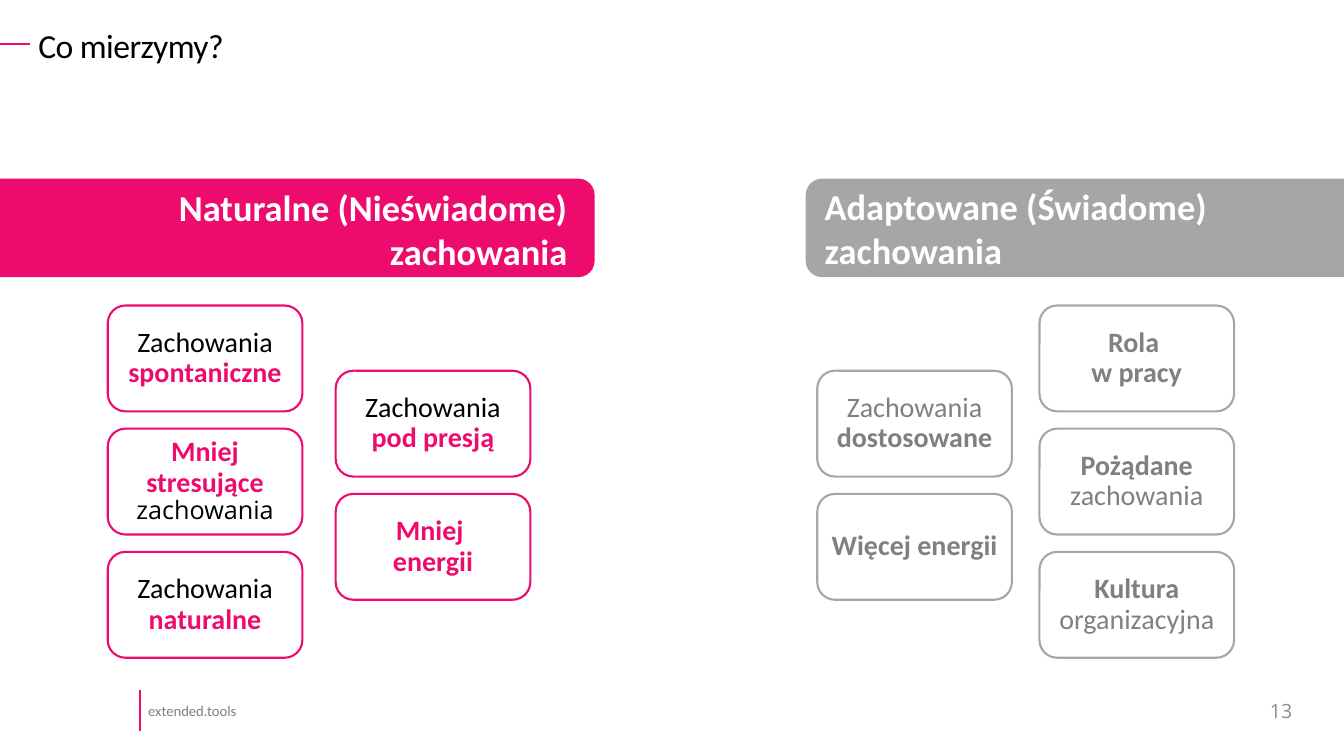
from pptx import Presentation
from pptx.dml.color import RGBColor
from pptx.enum.shapes import MSO_CONNECTOR, MSO_SHAPE
from pptx.enum.text import MSO_ANCHOR, PP_ALIGN
from pptx.oxml.ns import qn
from pptx.util import Pt
from lxml.etree import SubElement

PINK = RGBColor(0xED, 0x0C, 0x6D)
SILVER = RGBColor(0xA6, 0xA6, 0xA6)
GREY = RGBColor(0x80, 0x80, 0x80)
PAGE_GREY = RGBColor(0x8C, 0x8C, 0x8C)
BLACK = RGBColor(0, 0, 0)
WHITE = RGBColor(0xFF, 0xFF, 0xFF)

CARD_WIDTH, CARD_HEIGHT = 139, 75.6
CARD_TOP, CARD_PITCH = 218.2, 88
INNER_TOP = 264.8  # the two-card columns sit between the three-card rows


def add_span(para, text, size=20, font="Calibri", color=BLACK, bold=False, spacing=None):
    """Add formatted text to a paragraph; a newline becomes a line break."""
    for index, piece in enumerate(text.split("\n")):
        if index:
            para.add_line_break()
        span = para.add_run()
        span.text = piece
        span.font.size = Pt(size)
        span.font.name = font
        span.font.bold = bold
        span.font.color.rgb = color
        if spacing is not None:
            span._r.get_or_add_rPr().set("spc", str(spacing))


class SlideBuilder:
    def __init__(self, page):
        self.page = page

    def fill_frame(self, box, spans, align=PP_ALIGN.LEFT, anchor=MSO_ANCHOR.MIDDLE,
                   insets=(7.2, 3.6), line_spacing=None):
        frame = box.text_frame
        frame.word_wrap = True
        frame.vertical_anchor = anchor
        frame.margin_left = frame.margin_right = Pt(insets[0])
        frame.margin_top = frame.margin_bottom = Pt(insets[1])
        para = frame.paragraphs[0]
        para.alignment = align
        if line_spacing:
            para.line_spacing = line_spacing
        for text, style in spans:
            add_span(para, text, **style)

    def text(self, left, top, width, height, text, style, **layout):
        box = self.page.shapes.add_textbox(Pt(left), Pt(top), Pt(width), Pt(height))
        self.fill_frame(box, [(text, style)], **layout)

    def rounded(self, left, top, width, height, fill=None, outline=None):
        box = self.page.shapes.add_shape(MSO_SHAPE.ROUNDED_RECTANGLE,
                                         Pt(left), Pt(top), Pt(width), Pt(height))
        box.shadow.inherit = False
        if fill is None:
            box.fill.background()
        else:
            box.fill.solid()
            box.fill.fore_color.rgb = fill
        if outline is None:
            box.line.fill.background()
        else:
            box.line.color.rgb = outline
            box.line.width = Pt(1.5)
        return box

    def card(self, left, top, outline, spans):
        box = self.rounded(left, top, CARD_WIDTH, CARD_HEIGHT, outline=outline)
        self.fill_frame(box, spans, align=PP_ALIGN.CENTER, insets=(0, 0), line_spacing=0.9)

    def line(self, x1, y1, x2, y2):
        line = self.page.shapes.add_connector(MSO_CONNECTOR.STRAIGHT,
                                              Pt(x1), Pt(y1), Pt(x2), Pt(y2))
        line.line.color.rgb = PINK
        line.line.width = Pt(1.5)
        SubElement(line._element.spPr, qn("a:effectLst"))


def main():
    deck = Presentation()
    deck.slide_width, deck.slide_height = Pt(960), Pt(540)
    slide = SlideBuilder(deck.slides.add_slide(deck.slide_layouts[6]))

    # Footer and title
    slide.text(96.5, 496, 124, 23, "extended.tools", dict(size=10.5, color=GREY),
               insets=(9.4, 5))
    slide.line(100, 493.2, 100, 522)
    slide.line(21.6, 31.7, -16.6, 31.7)
    slide.text(21.6, 18, 909.4, 32.4, "Co mierzymy?", dict(size=24, spacing=-40),
               anchor=MSO_ANCHOR.TOP, insets=(5.8, 2.9), line_spacing=0.9)

    # Banners
    heading = dict(size=26, color=WHITE, bold=True)
    slide.rounded(575.5, 127.6, 411, 70.4, fill=SILVER)
    slide.text(582, 127.4, 329.8, 70.6, "Adaptowane (Świadome) zachowania", heading)
    slide.rounded(-28.8, 127.6, 453.6, 70.4, fill=PINK)
    slide.text(23, 128.2, 389.5, 70.6, "Naturalne (Nieświadome) zachowania", heading,
               align=PP_ALIGN.RIGHT)

    # Cards, column by column
    plain = dict(color=BLACK)
    pink = dict(color=PINK, bold=True)
    grey = dict(color=GREY)
    strong = dict(color=GREY, bold=True)
    small = dict(size=18, font="Open Sans")
    columns = [
        (77, CARD_TOP, PINK, [
            [("Zachowania ", plain), ("spontaniczne", pink)],
            [("Mniej stresujące ", pink), ("zachowania", small)],
            [("Zachowania ", plain), ("naturalne", pink)],
        ]),
        (239.8, INNER_TOP, PINK, [
            [("Zachowania", plain), (" ", small), ("pod presją", pink)],
            [("Mniej \nenergii", pink)],
        ]),
        (583.8, INNER_TOP, SILVER, [
            [("Zachowania ", grey), ("dostosowane", strong)],
            [("Więcej energii", strong)],
        ]),
        (742.5, CARD_TOP, SILVER, [
            [("Rola \nw pracy", strong)],
            [("Pożądane ", strong), ("zachowania", grey)],
            [("Kultura", strong), (" ", small), ("organizacyjna", grey)],
        ]),
    ]
    for left, top, outline, cards in columns:
        for row, spans in enumerate(cards):
            slide.card(left, top + row * CARD_PITCH, outline, spans)

    # Page number
    slide.text(839.5, 493.2, 90.7, 28.8, "13",
               dict(size=14, font="Open Sans", color=PAGE_GREY), align=PP_ALIGN.RIGHT)

    deck.save("out.pptx")


if __name__ == "__main__":
    main()
